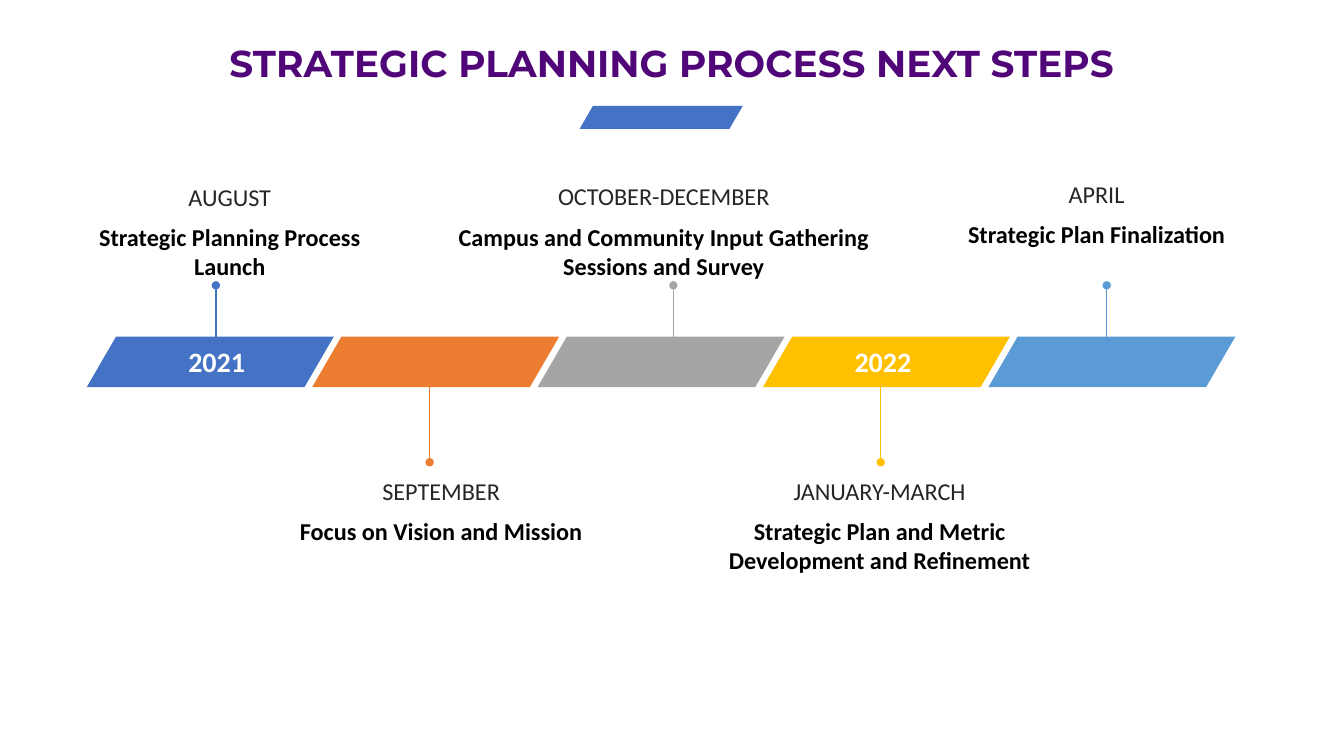
from dataclasses import dataclass

from lxml import etree
from pptx import Presentation
from pptx.dml.color import RGBColor
from pptx.enum.shapes import MSO_CONNECTOR, MSO_SHAPE
from pptx.enum.text import MSO_ANCHOR, PP_ALIGN
from pptx.oxml.ns import qn
from pptx.shapes.base import BaseShape
from pptx.slide import Slide
from pptx.util import Pt

TOP, BOTTOM = MSO_ANCHOR.TOP, MSO_ANCHOR.BOTTOM
CENTER = PP_ALIGN.CENTER
SLANT = MSO_SHAPE.PARALLELOGRAM
STRAIGHT = MSO_CONNECTOR.STRAIGHT

COLORS = {
    "purple": "500678", "blue": "4472C4", "orange": "ED7D31",
    "gray": "A5A5A5", "gold": "FFC000", "sky": "5B9BD5",
    "dark": "262626", "black": "000000", "white": "FFFFFF",
}

Box = tuple[float, float, float, float]

# Band of bars, in points
BAR_LEFT, BAR_TOP, BAR_WIDE, BAR_HIGH, BAR_STEP = 62, 240.5, 176.4, 36, 161
UP_FROM, UP_TO = 263, 203.8
DOWN_FROM, DOWN_TO = 271, 330.2


@dataclass
class Step:
    month: str
    task: str
    color: str
    stem: float
    box: Box
    above: bool


@dataclass
class Year:
    label: str
    left: float


STEPS = [
    Step("AUGUST", "Strategic Planning Process Launch", "blue",
         154.2, (51.1, 118.8, 226, 84.2), True),
    Step("SEPTEMBER", "Focus on Vision and Mission", "orange",
         306.9, (178.6, 337.7, 273, 118), False),
    Step("OCTOBER-DECEMBER",
         "Campus and Community Input Gathering Sessions and Survey", "gray",
         481, (312.5, 116, 323.3, 86.4), True),
    Step("JANUARY-MARCH",
         "Strategic Plan and Metric Development and Refinement", "gold",
         629.1, (491.8, 337.7, 273, 171.4), False),
    Step("APRIL", "Strategic Plan Finalization", "sky",
         790.5, (670.3, 121.7, 226, 58.3), True),
]
YEARS = [Year("2021", 101.5), Year("2022", 577.4)]


def rgb(name: str) -> RGBColor:
    return RGBColor.from_string(COLORS[name])


def write(shape: BaseShape, text: str, *, size: float, color: str,
          bold: bool = False, font: str = "Calibri", anchor: MSO_ANCHOR = TOP,
          more: bool = False, before: float = 0) -> None:
    """Write one centred paragraph, after the present text if more is set."""
    frame = shape.text_frame
    frame.word_wrap = True
    frame.vertical_anchor = anchor
    frame.margin_left = frame.margin_right = Pt(4.8)
    frame.margin_top = frame.margin_bottom = Pt(2.4)
    para = frame.add_paragraph() if more else frame.paragraphs[0]
    para.alignment = CENTER
    para.space_before = Pt(before)
    run = para.add_run()
    run.text = text
    run.font.name = font
    run.font.size = Pt(size)
    run.font.bold = bold
    run.font.color.rgb = rgb(color)


def add_box(slide: Slide, box: Box) -> BaseShape:
    return slide.shapes.add_textbox(*map(Pt, box))


def add_bar(slide: Slide, box: Box, color: str) -> None:
    bar = slide.shapes.add_shape(SLANT, *map(Pt, box))
    bar.adjustments[0] = 0.58
    bar.shadow.inherit = False
    bar.fill.solid()
    bar.fill.fore_color.rgb = rgb(color)
    bar.line.fill.background()


def add_stem(slide: Slide, step: Step) -> None:
    start, end = (UP_FROM, UP_TO) if step.above else (DOWN_FROM, DOWN_TO)
    stem = slide.shapes.add_connector(
        STRAIGHT, Pt(step.stem), Pt(start), Pt(step.stem), Pt(end))
    stem.line.width = Pt(1)
    stem.line.color.rgb = rgb(step.color)
    props = stem.element.spPr
    etree.SubElement(props.find(qn("a:ln")), qn("a:tailEnd"), type="oval")
    etree.SubElement(props, qn("a:effectLst"))


def add_note(slide: Slide, step: Step) -> None:
    note = add_box(slide, step.box)
    anchor = BOTTOM if step.above else TOP
    write(note, step.month, size=17.3, color="dark", anchor=anchor)
    write(note, step.task, size=17.3, color="black", bold=True,
          anchor=anchor, more=True, before=8)


def main() -> None:
    deck = Presentation()
    deck.slide_width, deck.slide_height = Pt(960), Pt(540)
    slide = deck.slides.add_slide(deck.slide_layouts[5])

    # Title and accent
    title = slide.shapes.title
    title.left, title.top = Pt(0), Pt(26.6)
    title.width, title.height = Pt(960), Pt(42)
    write(title, "STRATEGIC PLANNING PROCESS NEXT STEPS", size=26.7,
          color="purple", bold=True, font="Montserrat")
    add_bar(slide, (414, 75.6, 116.6, 16.5), "blue")

    # Stems lie behind the bars
    for step in STEPS:
        add_stem(slide, step)

    # Bars and notes
    for i, step in enumerate(STEPS):
        left = BAR_LEFT + i * BAR_STEP
        add_bar(slide, (left, BAR_TOP, BAR_WIDE, BAR_HIGH), step.color)
        add_note(slide, step)

    # Years
    for year in YEARS:
        label = add_box(slide, (year.left, 244, 106.6, 24.5))
        write(label, year.label, size=20, color="white", bold=True)

    deck.save("out.pptx")


if __name__ == "__main__":
    main()
